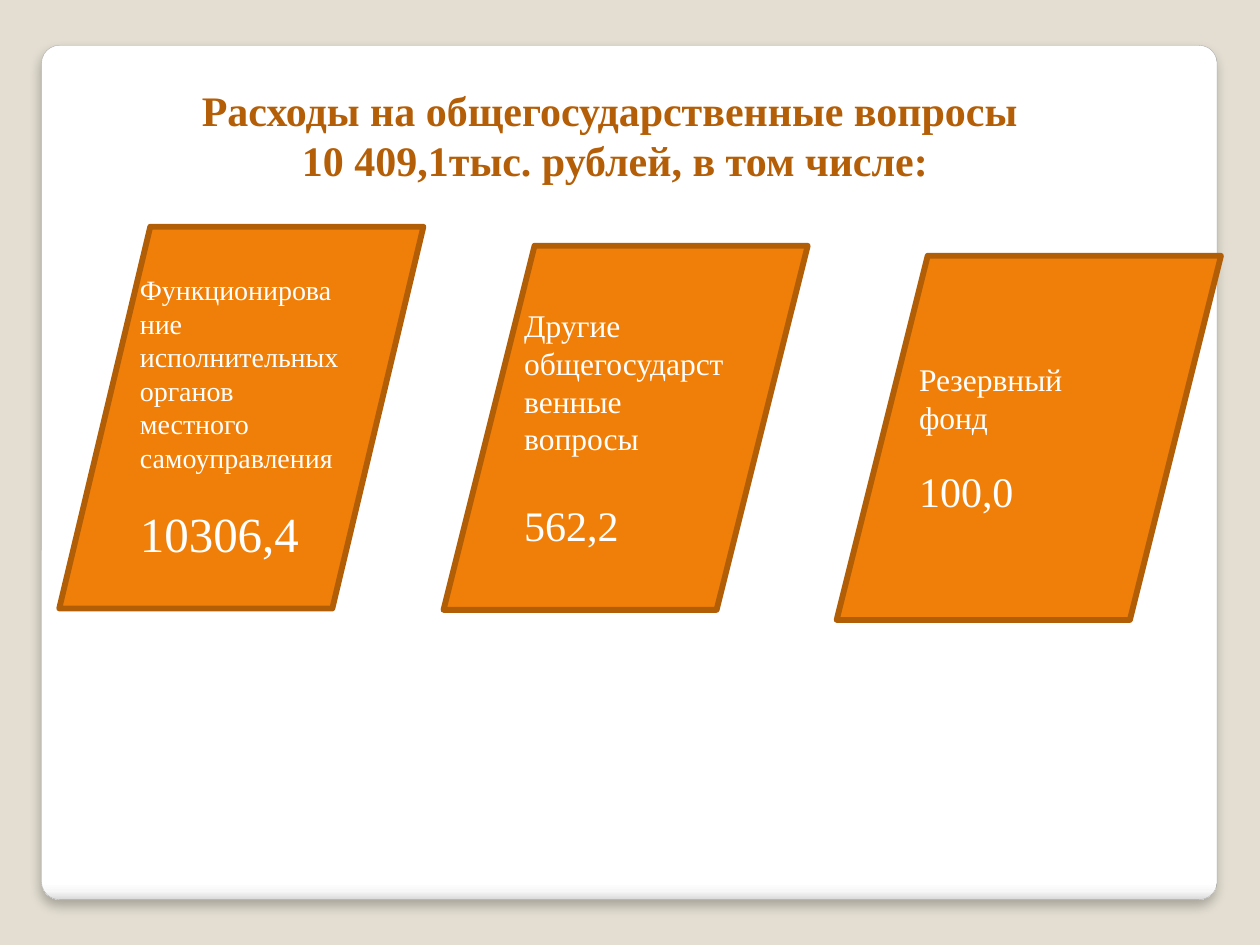
from dataclasses import dataclass

from lxml import etree
from pptx import Presentation
from pptx.dml.color import RGBColor
from pptx.enum import shapes, text
from pptx.oxml import parse_xml
from pptx.oxml.ns import nsdecls, qn
from pptx.util import Inches, Pt


@dataclass(frozen=True)
class Theme:
    font: str = "Times New Roman"
    backdrop: str = "E3DED1"
    panel_edge: str = "A4A4A4"
    panel_stops: tuple = ((0, "FFFFFF"), (98, "FFFFFF"), (99, "F7F7F7"), (100, "DADADA"))
    title: str = "B45F07"
    card: str = "F07F09"
    card_edge: str = "B25E07"
    card_text: str = "FFFFFF"
    title_size: int = 24


THEME = Theme()


def rgb(value):
    return RGBColor.from_string(value)


def add_run(para, content, size, color, bold=False):
    span = para.add_run()
    span.text = content
    span.font.name = THEME.font
    span.font.size = Pt(size)
    span.font.bold = bold
    span.font.color.rgb = rgb(color)


def add_panel(page, box):
    """Rounded white panel with a shaded lower edge and a soft shadow."""
    panel = page.shapes.add_shape(shapes.MSO_SHAPE.ROUNDED_RECTANGLE, *box)
    panel.adjustments[0] = 0.021
    panel.line.color.rgb = rgb(THEME.panel_edge)
    panel.line.width = Pt(0.16)

    panel.fill.gradient()
    panel.fill.gradient_angle = 270
    stops = panel.fill._fill._gradFill.find(qn("a:gsLst"))
    for stop in list(stops):
        stops.remove(stop)
    for position, color in THEME.panel_stops:
        stop = etree.SubElement(stops, qn("a:gs"), pos=str(position * 1000))
        etree.SubElement(stop, qn("a:srgbClr"), val=color)

    panel._element.spPr.append(parse_xml(
        f'<a:effectLst {nsdecls("a")}>'
        f'<a:outerShdw blurRad="{Pt(6)}" dist="{Pt(4)}" dir="5400000" rotWithShape="0">'
        '<a:srgbClr val="000000"><a:alpha val="25000"/></a:srgbClr>'
        '</a:outerShdw></a:effectLst>'))


def fill_title(page, box, lines):
    title = page.shapes.title
    title.left, title.top, title.width, title.height = box
    frame = title.text_frame
    frame.word_wrap = True
    frame.auto_size = text.MSO_AUTO_SIZE.NONE
    frame.vertical_anchor = text.MSO_ANCHOR.TOP
    for index, line in enumerate(lines):
        para = frame.add_paragraph() if index else frame.paragraphs[0]
        para.alignment = text.PP_ALIGN.CENTER
        add_run(para, line, THEME.title_size, THEME.title, bold=True)


def add_card(page, box, label, label_size, amount, amount_size, gap):
    """Slanted card: an expense label with its amount below."""
    card = page.shapes.add_shape(shapes.MSO_SHAPE.PARALLELOGRAM, *box)
    card.shadow.inherit = False
    card.fill.solid()
    card.fill.fore_color.rgb = rgb(THEME.card)
    card.line.color.rgb = rgb(THEME.card_edge)
    card.line.width = Pt(3.35)
    etree.SubElement(card.line._get_or_add_ln(), qn("a:round"))

    frame = card.text_frame
    frame.word_wrap = True
    frame.vertical_anchor = text.MSO_ANCHOR.MIDDLE
    label_para, amount_para = frame.paragraphs[0], frame.add_paragraph()
    label_para.alignment = amount_para.alignment = text.PP_ALIGN.LEFT
    amount_para.space_before = Pt(gap)
    add_run(label_para, label, label_size, THEME.card_text)
    add_run(amount_para, amount, amount_size, THEME.card_text)


def inches(*lengths):
    return [Inches(length) for length in lengths]


def main():
    deck = Presentation()
    deck.slide_width, deck.slide_height = inches(10, 7.5)
    page = deck.slides.add_slide(deck.slide_layouts.get_by_name("Title Only"))
    page.background.fill.solid()
    page.background.fill.fore_color.rgb = rgb(THEME.backdrop)

    add_panel(page, inches(0.33, 0.36, 9.33, 6.78))
    # The title placeholder comes first, so it is raised above the panel.
    page.shapes._spTree.append(page.shapes.title._element)
    fill_title(page, inches(0.62, 0.62, 8.52, 0.91),
               ["Расходы на общегосударственные вопросы ",
                "10 409,1тыс. рублей, в том числе:"])

    cards = [
        ((0.47, 1.8, 2.89, 3.03),
         "Функционирование исполнительных органов местного самоуправления",
         16, "10306,4", 28, 17),
        ((3.52, 1.95, 2.89, 2.89),
         "Другие общегосударственные вопросы", 18, "562,2", 24, 24),
        ((6.64, 2.03, 3.05, 2.89), "Резервный фонд", 18, "100,0", 24, 17),
    ]
    for box, *content in cards:
        add_card(page, inches(*box), *content)

    deck.save("out.pptx")


if __name__ == "__main__":
    main()
